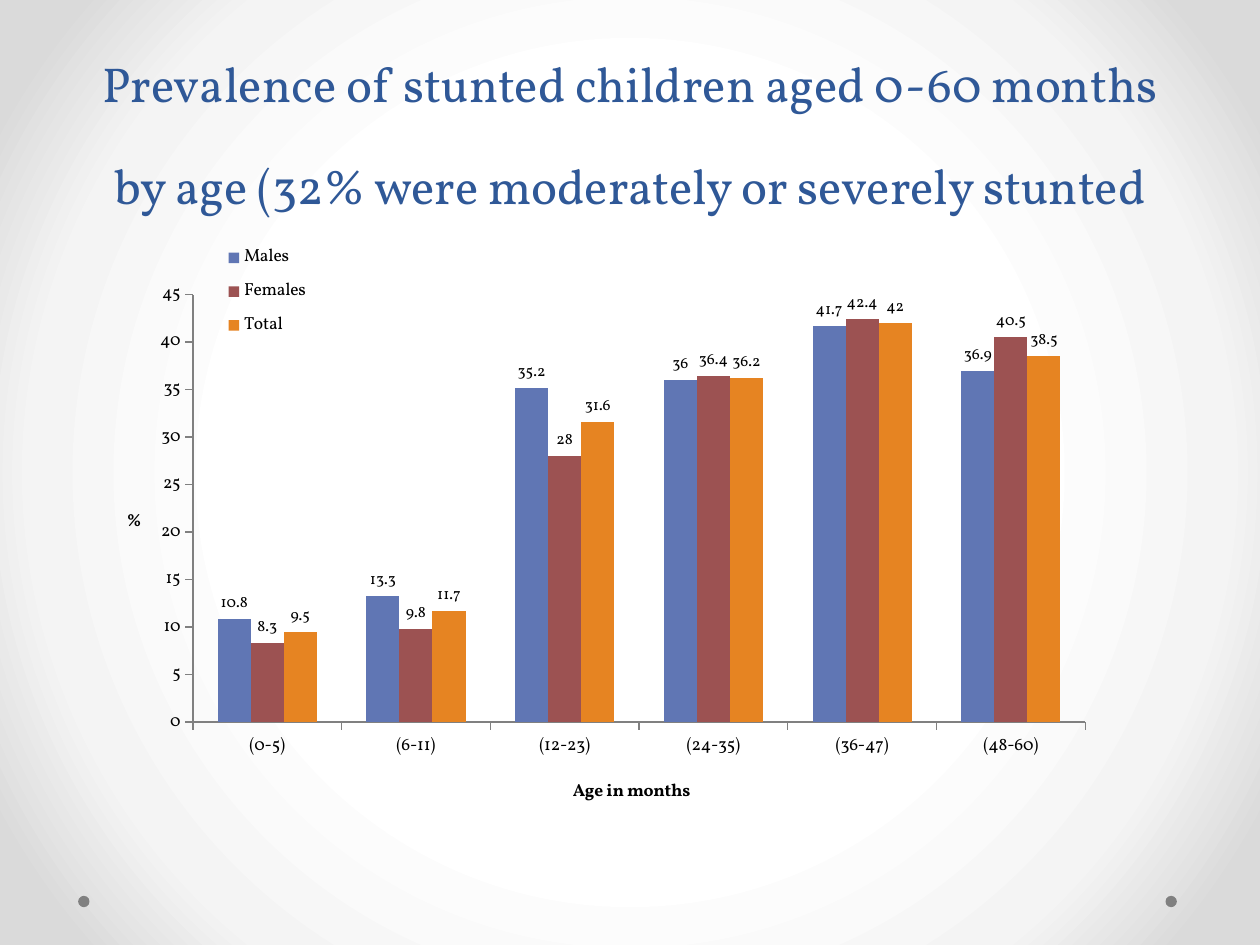
"""Build a slide charting the prevalence of stunted children by age and sex."""
from lxml.etree import SubElement
from pptx import Presentation
from pptx.chart.data import CategoryChartData
from pptx.dml.color import RGBColor
from pptx.enum.chart import XL_CHART_TYPE, XL_LABEL_POSITION, XL_LEGEND_POSITION, XL_TICK_MARK
from pptx.enum.shapes import MSO_SHAPE
from pptx.enum.text import MSO_ANCHOR, MSO_AUTO_SIZE, PP_ALIGN
from pptx.oxml import parse_xml
from pptx.oxml.ns import nsdecls, qn
from pptx.util import Inches, Pt

FONT = "Vollkorn"
BLACK = RGBColor(0x00, 0x00, 0x00)
GRAY = RGBColor(0x80, 0x80, 0x80)
NAVY = RGBColor(0x2F, 0x58, 0x97)
BLUE = RGBColor(0x60, 0x76, 0xB4)
RED = RGBColor(0x9C, 0x52, 0x52)
ORANGE = RGBColor(0xE6, 0x84, 0x22)
WHITE = RGBColor(0xFF, 0xFF, 0xFF)
PALE = RGBColor(0xF4, 0xF4, 0xF4)
SILVER = RGBColor(0xDA, 0xDA, 0xDA)


def place(parent, **fractions):
    """Give a chart part a manual layout in fractions of the chart."""
    for old in parent.findall(qn("c:layout")):
        parent.remove(old)
    layout = parse_xml(f"<c:layout {nsdecls('c')}/>")
    manual = SubElement(layout, qn("c:manualLayout"))
    if parent.tag == qn("c:plotArea"):
        SubElement(manual, qn("c:layoutTarget"), val="inner")
    for side in "xy":
        SubElement(manual, qn(f"c:{side}Mode"), val="edge")
    for side, value in fractions.items():
        SubElement(manual, qn(f"c:{side}"), val=str(value))
    overlay = parent.find(qn("c:overlay"))
    parent.insert(0 if overlay is None else parent.index(overlay), layout)


prs = Presentation()
prs.slide_width, prs.slide_height = Inches(10), Inches(7.5)
slide = prs.slides.add_slide(prs.slide_layouts[5])

backdrop = slide.background.fill
backdrop.gradient()
gradient = slide.background._cSld.find(".//" + qn("a:gradFill"))
for child in list(gradient):
    gradient.remove(child)
stops = SubElement(gradient, qn("a:gsLst"))
for percent, color in ((50, WHITE), (76, PALE), (92, SILVER)):
    stop = SubElement(stops, qn("a:gs"), pos=str(percent * 1000))
    SubElement(stop, qn("a:srgbClr"), val=str(color))
circle = SubElement(gradient, qn("a:path"), path="circle")
SubElement(circle, qn("a:fillToRect"), l="50000", t="50000", r="50000", b="50000")

for left in (9.25, 0.62):
    dot = slide.shapes.add_shape(
        MSO_SHAPE.OVAL, Inches(left), Inches(7.11), Inches(0.09), Inches(0.09))
    dot.shadow.inherit = False
    dot.fill.solid()
    dot.fill.fore_color.rgb = GRAY
    dot.line.fill.background()

heading = slide.shapes.title
heading.left, heading.top = Inches(0.5), Inches(0)
heading.width, heading.height = Inches(9), Inches(1.75)
heading.text_frame.text = (
    "Prevalence of stunted children aged 0-60 months by age "
    "(32% were moderately or severely stunted")
heading.text_frame.word_wrap = True
heading.text_frame.auto_size = MSO_AUTO_SIZE.NONE
heading.text_frame.vertical_anchor = MSO_ANCHOR.BOTTOM
headline = heading.text_frame.paragraphs[0]
headline.alignment = PP_ALIGN.CENTER
headline.line_spacing = Pt(58)
headline.font.name, headline.font.size = FONT, Pt(28)
headline.font.color.rgb = NAVY

groups = (
    ("Males", BLUE, (10.8, 13.3, 35.2, 36, 41.7, 36.9)),
    ("Females", RED, (8.3, 9.8, 28, 36.4, 42.4, 40.5)),
    ("Total", ORANGE, (9.5, 11.7, 31.6, 36.2, 42, 38.5)),
)
stunting = CategoryChartData()
stunting.categories = ["(0-5)", "(6-11)", "(12-23)", "(24-35)", "(36-47)", "(48-60)"]
for name, color, values in groups:
    stunting.add_series(name, values)
chart = slide.shapes.add_chart(
    XL_CHART_TYPE.COLUMN_CLUSTERED, Inches(0.98), Inches(1.78),
    Inches(7.87), Inches(4.65), stunting).chart
chart.has_title = False
chart.font.name, chart.font.size = FONT, Pt(10)
chart.font.color.rgb = BLACK

bars = chart.plots[0]
bars.gap_width, bars.overlap = 150, 0
bars.vary_by_categories = False
for series, (name, color, values) in zip(bars.series, groups):
    series.format.fill.solid()
    series.format.fill.fore_color.rgb = color
    labels = series.data_labels
    labels.show_value = True
    labels.position = XL_LABEL_POSITION.OUTSIDE_END
    labels.font.name, labels.font.size = FONT, Pt(9)
    labels.font.color.rgb = BLACK

for axis, caption, x, y in (
        (chart.category_axis, "Age in months", 0.45, 0.94),
        (chart.value_axis, "%", 0, 0.48)):
    axis.has_major_gridlines = False
    axis.major_tick_mark = XL_TICK_MARK.OUTSIDE
    axis.minor_tick_mark = XL_TICK_MARK.NONE
    axis.format.line.color.rgb = GRAY
    axis_text = axis.axis_title.text_frame
    axis_text.text = caption
    axis_text._txBody.bodyPr.set("rot", "0")
    axis_text._txBody.bodyPr.set("vert", "horz")
    caption_font = axis_text.paragraphs[0].font
    caption_font.name, caption_font.size, caption_font.bold = FONT, Pt(10), True
    caption_font.color.rgb = BLACK
    place(axis.axis_title._element, x=x, y=y)
chart.value_axis.minimum_scale = 0
chart.value_axis.maximum_scale = 45
chart.value_axis.major_unit = 5

chart.has_legend = True
chart.legend.position = XL_LEGEND_POSITION.RIGHT
chart.legend.include_in_layout = False
chart.legend.font.name, chart.legend.font.size = FONT, Pt(10)
chart.legend.font.color.rgb = BLACK
place(chart.legend._element, x=0.08, y=0.02, w=0.13, h=0.19)
place(chart._chartSpace.chart.plotArea, x=0.07, y=0.12, w=0.9, h=0.73)

prs.save("out.pptx")
